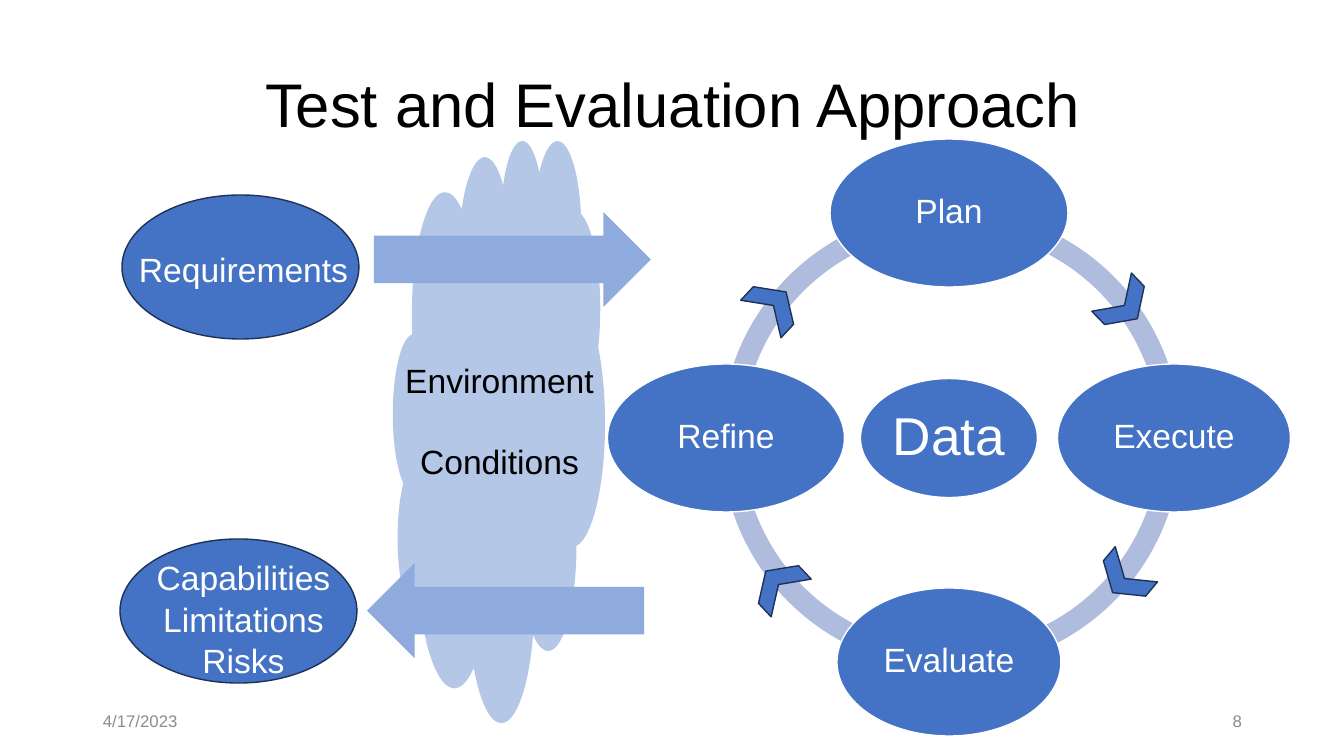
"""Build the Test and Evaluation Approach slide."""
from pptx import Presentation
from pptx.dml.color import RGBColor
from pptx.enum.shapes import MSO_SHAPE as SHAPE
from pptx.enum.text import MSO_ANCHOR as ANCHOR, PP_ALIGN as ALIGN
from pptx.util import Pt

PX = 12700 / 1.4
BLUE, NAVY, WHITE, BLACK = "4472C4", "1E3256", "FFFFFF", "000000"
RING, CLOUD, ARROW, GRAY = "B0BCDE", "B4C7E7", "8FAADC", "8C8C8C"
rgb = RGBColor.from_string


def draw(kind, box, fill, line=None, rotation=0):
    sp = s.shapes.add_shape(kind, *(round(v * PX) for v in box))
    sp.shadow.inherit = False
    sp.rotation = rotation
    sp.fill.solid()
    sp.fill.fore_color.rgb = rgb(fill)
    if line:
        sp.line.color.rgb = rgb(line)
        sp.line.width = Pt(1)
    else:
        sp.line.fill.background()
    return sp


def write(sp, text, size, color, align=ALIGN.CENTER, anchor=ANCHOR.MIDDLE, spacing=0.9):
    tf = sp.text_frame
    tf.word_wrap = True
    tf.vertical_anchor = anchor
    tf.text = text
    for p in tf.paragraphs:
        p.alignment = align
        p.line_spacing = spacing
        p.font.size = Pt(size)
        for r in p.runs:
            r.font.name = "Arial"
            r.font.size = Pt(size)
            r.font.color.rgb = rgb(color)
    return tf


prs = Presentation()
prs.slide_width, prs.slide_height = round(1344 * PX), round(756 * PX)
s = prs.slides.add_slide(prs.slide_layouts[5])

title = s.shapes.title
title.left, title.top, title.width, title.height = (round(v * PX) for v in (193, 35, 960, 146))
write(title, "Test and Evaluation Approach", 44, BLACK)

for x, text, align in [(93, "4/17/2023", ALIGN.LEFT), (950, "8", ALIGN.RIGHT)]:
    sp = s.shapes.add_textbox(*(round(v * PX) for v in (x, 701, 302, 40)))
    write(sp, text, 12, GRAY, align, spacing=1)

for quarter in range(4):
    arc = draw(SHAPE.BLOCK_ARC, (721, 209, 460, 460), RING)
    arc.adjustments[0] = 54 * quarter
    arc.adjustments[1] = 54 * (quarter + 1) % 216
    arc.adjustments[2] = 0.046

nodes = [
    ("Data", 949, 438, 177, 119, 38),
    ("Plan", 949, 213, 238, 148, 24),
    ("Execute", 1174, 438, 233, 148, 24),
    ("Evaluate", 949, 662, 224, 148, 24),
    ("Refine", 726, 438, 237, 148, 24),
]
for text, cx, cy, w, h, size in nodes:
    node = draw(SHAPE.OVAL, (cx - w / 2, cy - h / 2, w, h), BLUE, WHITE)
    tf = write(node, text, size, WHITE)
    tf.margin_left = tf.margin_right = tf.margin_top = tf.margin_bottom = round(3 * PX)

for x, y, rotation in [(755, 278, 313), (1106, 278, 46), (1106, 551, 129.9), (760, 557, 226.7)]:
    draw(SHAPE.CHEVRON, (x, y, 37, 55), BLUE, NAVY, rotation)

draw(SHAPE.CLOUD, (393, 139, 212, 582), CLOUD)
for x, y in [(122, 195), (120, 539)]:
    draw(SHAPE.OVAL, (x, y, 237, 144), BLUE, NAVY)

labels = [
    ("Environment\nConditions", 381, 353, 132, BLACK),
    ("Requirements", 125, 242, 50, WHITE),
    ("Capabilities\nLimitations\nRisks", 125, 550, 132, WHITE),
]
for text, x, y, h, color in labels:
    sp = s.shapes.add_textbox(*(round(v * PX) for v in (x, y, 237, h)))
    tf = write(sp, text, 24, color, anchor=ANCHOR.TOP, spacing=1.04)
    if text.startswith("Environment"):
        tf.paragraphs[1].space_before = Pt(28)

for x, y, rotation in [(374, 212, 0), (367, 563, 180)]:
    draw(SHAPE.RIGHT_ARROW, (x, y, 277, 95), ARROW, rotation=rotation)

prs.save("out.pptx")
